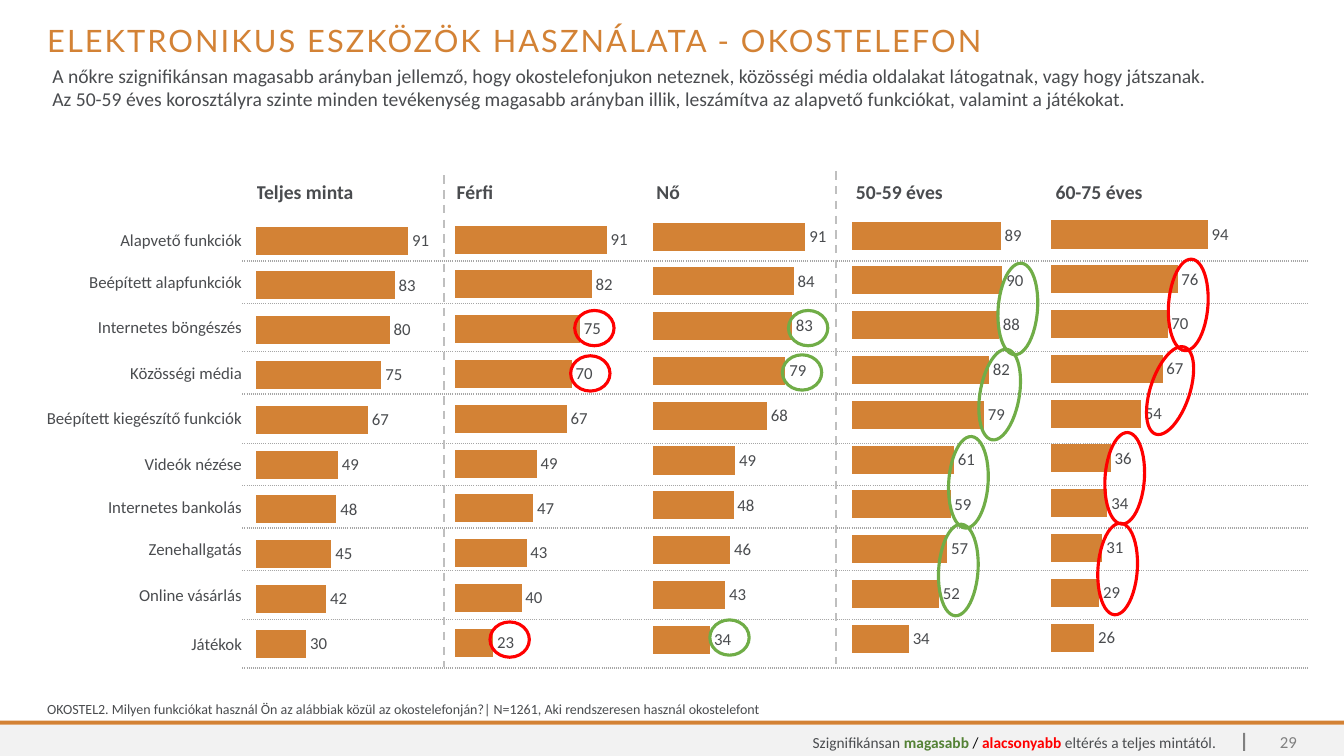
from lxml import etree
from pptx import Presentation
from pptx.chart.data import CategoryChartData
from pptx.dml.color import RGBColor
from pptx.enum.chart import XL_CHART_TYPE as ChartType, XL_LABEL_POSITION as LabelPosition
from pptx.enum.dml import MSO_LINE
from pptx.enum.shapes import MSO_CONNECTOR as Connector, MSO_SHAPE as Shape
from pptx.enum.text import MSO_ANCHOR as Anchor, PP_ALIGN as Align
from pptx.oxml import parse_xml
from pptx.oxml.ns import nsdecls, qn
from pptx.util import Inches, Pt

ORANGE, INK, GREY = "D38235", "4A4C4F", "808080"
HIGHER, LOWER = "70AD47", "FF0000"

ACTIVITIES = [  # label, row height
    ("Alapvető funkciók", 0.42), ("Beépített alapfunkciók", 0.42),
    ("Internetes böngészés", 0.48), ("Közösségi média", 0.42),
    ("Beépített kiegészítő funkciók", 0.49), ("Videók nézése", 0.42),
    ("Internetes bankolás", 0.42), ("Zenehallgatás", 0.42),
    ("Online vásárlás", 0.49), ("Játékok", 0.48),
]
GROUPS = [  # heading, chart top, values
    ("Teljes minta", 2.12, (91, 83, 80, 75, 67, 49, 48, 45, 42, 30)),
    ("Férfi", 2.11, (91, 82, 75, 70, 67, 49, 47, 43, 40, 23)),
    ("Nő", 2.08, (91, 84, 83, 79, 68, 49, 48, 46, 43, 34)),
    ("50-59 éves", 2.07, (89, 90, 88, 82, 79, 61, 59, 57, 52, 34)),
    ("60-75 éves", 2.06, (94, 76, 70, 67, 54, 36, 34, 31, 29, 26)),
]
GROUPS_LEFT, GROUP_STEP = 2.54, 1.97
SINGLE_RINGS = [  # colour, (left, top) of rings around one value
    (LOWER, [(5.7, 3.08), (5.66, 3.53), (4.86, 6.17)]),
    (HIGHER, [(7.82, 3.08), (7.76, 3.52), (7.04, 6.15)]),
]
PAIR_RINGS = [  # colour, (left, top, rotation) of rings around two values
    (HIGHER, [(9.9, 2.61, 4.3), (9.72, 3.46, 9.6), (9.41, 4.33, 3.9), (9.31, 5.2, 3.9)]),
    (LOWER, [(11.59, 2.57, 4.3), (11.41, 3.42, 18.3), (10.96, 4.29, 3.9), (10.89, 5.19, 3.9)]),
]


def color(hex_code):
    return RGBColor.from_string(hex_code)


def box(left, top, width, height):
    return Inches(left), Inches(top), Inches(width), Inches(height)


def style_font(font, size, hex_code, bold=False, name="Calibri"):
    font.name, font.size, font.bold = name, Pt(size), bold
    font.color.rgb = color(hex_code)


def add_run(paragraph, text, size, hex_code=INK, bold=False, name="Calibri"):
    run = paragraph.add_run()
    run.text = text
    style_font(run.font, size, hex_code, bold, name)
    return run


def add_text(slide, place, align=Align.LEFT, anchor=Anchor.TOP):
    """Add an empty wrapping text box and return its text frame."""
    frame = slide.shapes.add_textbox(*box(*place)).text_frame
    frame.word_wrap = True
    frame.vertical_anchor = anchor
    frame.paragraphs[0].alignment = align
    return frame


def add_block(slide, place, hex_code):
    block = slide.shapes.add_shape(Shape.RECTANGLE, *box(*place))
    block.shadow.inherit = False
    block.fill.solid()
    block.fill.fore_color.rgb = color(hex_code)
    block.line.fill.background()


def add_ring(slide, left, top, height, hex_code, rotation=0):
    ring = slide.shapes.add_shape(Shape.OVAL, *box(left, top, 0.39, height))
    ring.shadow.inherit = False
    ring.fill.background()
    ring.line.color.rgb = color(hex_code)
    ring.line.width = Pt(2.25)
    ring.rotation = rotation


def add_divider(slide, x, top, bottom):
    divider = slide.shapes.add_connector(
        Connector.STRAIGHT, Inches(x), Inches(top), Inches(x), Inches(bottom))
    divider.line.color.rgb = color("BFBFBF")
    divider.line.width = Pt(1.5)
    divider.line.dash_style = MSO_LINE.DASH
    etree.SubElement(divider._element.spPr, qn("a:effectLst"))


def add_plain_table(slide, place, widths, heights):
    """Add a table without banding, with unfilled cells and thin margins."""
    table = slide.shapes.add_table(len(heights), len(widths), *box(*place)).table
    table.first_row = table.horz_banding = False
    for column, width in zip(table.columns, widths):
        column.width = Inches(width)
    for row, height in zip(table.rows, heights):
        row.height = Inches(height)
    for cell in table.iter_cells():
        cell.fill.background()
        cell.vertical_anchor = Anchor.MIDDLE
        cell.margin_left = cell.margin_right = cell.margin_top = Inches(0.01)
        cell.margin_bottom = 0
    return table


def add_dotted_borders(cell, sides):
    for position, side in enumerate(sides):
        border = parse_xml(
            f'<a:ln{side} {nsdecls("a")} w="12700"><a:solidFill><a:srgbClr val="A6A6A6"/>'
            f'</a:solidFill><a:prstDash val="sysDot"/></a:ln{side}>')
        cell._tc.get_or_add_tcPr().insert(position, border)


def add_activity_rows(slide):
    heights = [height for _, height in ACTIVITIES]
    table = add_plain_table(slide, (-0.03, 2.17, 13.01, sum(heights)), (2.44, 10.57), heights)
    for row, (activity, _) in enumerate(ACTIVITIES):
        label = table.cell(row, 0).text_frame.paragraphs[0]
        label.alignment = Align.RIGHT
        add_run(label, activity, 12)
        add_dotted_borders(table.cell(row, 1), "TB" if row else "B")


def add_group_headings(slide):
    widths = [1.98] * len(GROUPS)
    table = add_plain_table(slide, (GROUPS_LEFT, 1.74, sum(widths), 0.33), widths, [0.33])
    table.cell(0, 0).margin_left = 0
    for column, (heading, _, _) in enumerate(GROUPS):
        add_run(table.cell(0, column).text_frame.paragraphs[0], heading, 14, bold=True)


def add_bars(slide, left, top, values):
    usage = CategoryChartData(number_format="#,##0")
    usage.categories = [str(number) for number in range(1, len(values) + 1)]
    usage.add_series("Series 1", values)
    chart = slide.shapes.add_chart(
        ChartType.BAR_CLUSTERED, *box(left, top, 1.95, 4.49), usage).chart
    chart.has_legend = chart.has_title = False
    style_font(chart.font, 14, INK)
    chart.category_axis.reverse_order = True
    chart.category_axis.visible = chart.value_axis.visible = False
    chart.value_axis.has_major_gridlines = False
    chart.value_axis.minimum_scale, chart.value_axis.maximum_scale = 0, 100
    chart.value_axis.major_unit = 10

    plot = chart.plots[0]
    plot.gap_width = 60
    plot.vary_by_categories = False
    bars = plot.series[0].format.fill
    bars.solid()
    bars.fore_color.rgb = color(ORANGE)
    plot.has_data_labels = True
    labels = plot.data_labels
    labels.show_value = True
    labels.position = LabelPosition.OUTSIDE_END
    labels.number_format, labels.number_format_is_linked = "#,##0", False
    style_font(labels.font, 12, INK)

    plot_area = chart._chartSpace.chart.plotArea
    for old_layout in plot_area.findall(qn("c:layout")):
        plot_area.remove(old_layout)
    plot_area.insert(0, parse_xml(
        f'<c:layout {nsdecls("c")}><c:manualLayout><c:layoutTarget val="inner"/>'
        '<c:xMode val="edge"/><c:yMode val="edge"/><c:x val="0"/><c:y val="0.01"/>'
        '<c:w val="0.85"/><c:h val="0.99"/></c:manualLayout></c:layout>'))


def add_heading(slide):
    title = add_text(slide, (0.37, 0.21, 12.6, 0.46)).paragraphs[0]
    title.line_spacing = 0.9
    run = add_run(title, "ELEKTRONIKUS ESZKÖZÖK HASZNÁLATA - OKOSTELEFON", 22, ORANGE, name="Lato")
    run.font._element.set("spc", "150")
    findings = add_text(slide, (0.42, 0.58, 12.55, 0.59))
    add_run(findings.paragraphs[0], "A nőkre szignifikánsan magasabb arányban jellemző, hogy "
            "okostelefonjukon neteznek, közösségi média oldalakat látogatnak, vagy hogy játszanak.", 14)
    add_run(findings.add_paragraph(), "Az 50-59 éves korosztályra szinte minden tevékenység magasabb "
            "arányban illik, leszámítva az alapvető funkciókat, valamint a játékokat.", 14)


def add_footer(slide):
    add_block(slide, (0, 7.19, 13.33, 0.31), "F2F2F2")
    add_block(slide, (0, 7.15, 13.33, 0.04), ORANGE)
    add_block(slide, (12.33, 7.27, 0.02, 0.18), GREY)
    page = add_text(slide, (12.49, 7.27, 0.47, 0.18), Align.RIGHT, Anchor.MIDDLE)
    add_run(page.paragraphs[0], "29", 12, GREY)
    legend = add_text(slide, (4.54, 7.27, 7.62, 0.18), Align.RIGHT, Anchor.MIDDLE).paragraphs[0]
    for words, hex_code, bold in (
            ("Szignifikánsan ", INK, False), ("magasabb ", "548235", True), ("/ ", "000000", False),
            ("alacsonyabb ", LOWER, True), ("eltérés a teljes mintától.", INK, False)):
        add_run(legend, words, 11, hex_code, bold)
    question = add_text(slide, (0.37, 6.9, 11.38, 0.27))
    add_run(question.paragraphs[0], "OKOSTEL2. Milyen funkciókat használ Ön az alábbiak közül az "
            "okostelefonján?| N=1261, Aki rendszeresen használ okostelefont", 10)


def main():
    deck = Presentation()
    deck.slide_width, deck.slide_height = Inches(13.33), Inches(7.5)
    slide = deck.slides.add_slide(deck.slide_layouts[6])
    add_footer(slide)
    add_activity_rows(slide)
    add_group_headings(slide)
    add_divider(slide, 4.4, 1.74, 6.62)
    add_divider(slide, 8.29, 1.7, 6.59)
    add_heading(slide)
    for column, (_, top, values) in enumerate(GROUPS):
        add_bars(slide, GROUPS_LEFT + column * GROUP_STEP, top, values)
    for hex_code, rings in SINGLE_RINGS:
        for left, top in rings:
            add_ring(slide, left, top, 0.35, hex_code)
    for hex_code, rings in PAIR_RINGS:
        for left, top, rotation in rings:
            add_ring(slide, left, top, 0.91, hex_code, rotation)
    deck.save("out.pptx")


if __name__ == "__main__":
    main()
